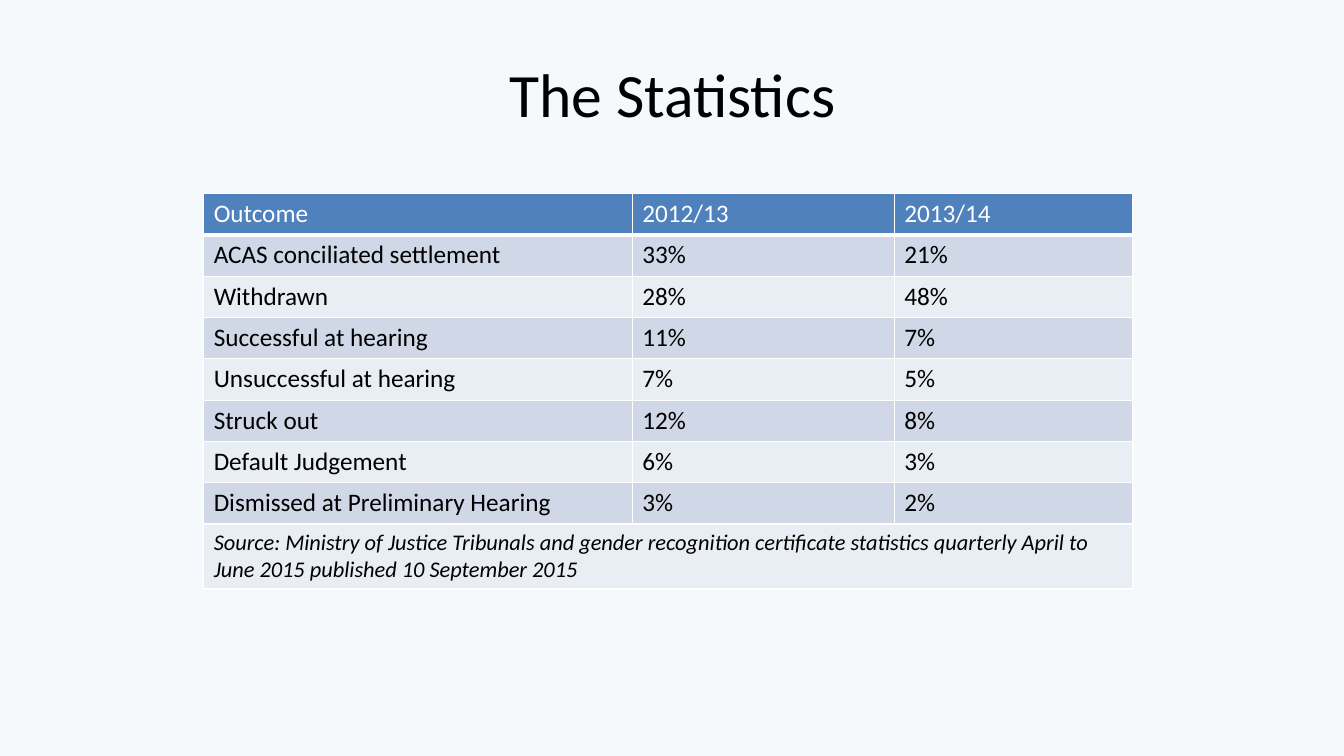
from dataclasses import dataclass

from lxml import etree
from pptx import Presentation
from pptx.dml.color import RGBColor
from pptx.enum.text import MSO_ANCHOR, PP_ALIGN
from pptx.oxml.ns import qn
from pptx.util import Inches, Pt

CENTER = PP_ALIGN.CENTER
MIDDLE = MSO_ANCHOR.MIDDLE
TITLE_ONLY = 5

FONT = "Calibri"
BACKGROUND = "F6F9FC"
WHITE, BLACK = "FFFFFF", "000000"
HEADER_FILL = "4F81BD"
BAND_FILLS = ("D0D8E8", "E9EDF4")

COLUMN_WIDTHS = (4.25, 2.6, 2.36)
ROW_HEIGHT, SOURCE_HEIGHT = 0.41, 0.63
TABLE_LEFT, TABLE_TOP = 2.02, 1.92


@dataclass(frozen=True)
class Outcome:
    name: str
    earlier: str
    later: str


HEADER = Outcome("Outcome", "2012/13", "2013/14")
OUTCOMES = [
    Outcome("ACAS conciliated settlement", "33%", "21%"),
    Outcome("Withdrawn", "28%", "48%"),
    Outcome("Successful at hearing", "11%", "7%"),
    Outcome("Unsuccessful at hearing", "7%", "5%"),
    Outcome("Struck out", "12%", "8%"),
    Outcome("Default Judgement", "6%", "3%"),
    Outcome("Dismissed at Preliminary Hearing", "3%", "2%"),
]
SOURCE = (
    "Source: Ministry of Justice Tribunals and gender recognition certificate "
    "statistics quarterly April to June 2015 published 10 September 2015"
)


def set_fill(fill, color: str) -> None:
    fill.solid()
    fill.fore_color.rgb = RGBColor.from_string(color)


def write(tf, text: str, color: str, size: float, italic: bool = False) -> None:
    r = tf.paragraphs[0].add_run()
    r.text = text
    formats = {"name": FONT, "size": Pt(size), "bold": False, "italic": italic}
    for attribute, value in formats.items():
        setattr(r.font, attribute, value)
    r.font.color.rgb = RGBColor.from_string(color)


def set_borders(cell, bottom: float) -> None:
    """Draw white cell edges: 1 pt, with the given width in points below."""
    properties = cell._tc.get_or_add_tcPr()
    edges = {"a:lnL": 1, "a:lnR": 1, "a:lnT": 1, "a:lnB": bottom}
    for position, (tag, width) in enumerate(edges.items()):
        line = etree.Element(qn(tag), w=str(Pt(width)))
        fill = etree.SubElement(line, qn("a:solidFill"))
        etree.SubElement(fill, qn("a:srgbClr"), val=WHITE)
        properties.insert(position, line)


def add_title(slide, text: str) -> None:
    sp = slide.shapes.title
    sp.left, sp.top = Inches(0.67), Inches(0.3)
    sp.width, sp.height = Inches(12), Inches(1.25)
    tf = sp.text_frame
    tf.vertical_anchor = MIDDLE
    tf.paragraphs[0].alignment = CENTER
    write(tf, text, BLACK, 44)


def add_statistics(slide) -> None:
    records = [HEADER, *OUTCOMES]
    source_row = len(records)
    heights = [ROW_HEIGHT] * source_row + [SOURCE_HEIGHT]
    table = slide.shapes.add_table(
        len(heights), len(COLUMN_WIDTHS), Inches(TABLE_LEFT), Inches(TABLE_TOP),
        Inches(sum(COLUMN_WIDTHS)), Inches(sum(heights)),
    ).table
    for column, width in zip(table.columns, COLUMN_WIDTHS):
        column.width = Inches(width)

    for i, (row, height) in enumerate(zip(table.rows, heights)):
        row.height = Inches(height)
        is_header = i == 0
        for cell in row.cells:
            set_fill(cell.fill, HEADER_FILL if is_header else BAND_FILLS[(i - 1) % 2])
            set_borders(cell, 3 if is_header else 1)

    for i, record in enumerate(records):
        color = WHITE if i == 0 else BLACK
        for j, text in enumerate((record.name, record.earlier, record.later)):
            write(table.cell(i, j).text_frame, text, color, 18)

    source = table.cell(source_row, 0)
    source.merge(table.cell(source_row, len(COLUMN_WIDTHS) - 1))
    write(source.text_frame, SOURCE, BLACK, 16, italic=True)


def main() -> None:
    prs = Presentation()
    prs.slide_width, prs.slide_height = Inches(13.33), Inches(7.5)
    slide = prs.slides.add_slide(prs.slide_layouts[TITLE_ONLY])
    set_fill(slide.background.fill, BACKGROUND)
    add_title(slide, "The Statistics")
    add_statistics(slide)
    prs.save("out.pptx")


if __name__ == "__main__":
    main()
